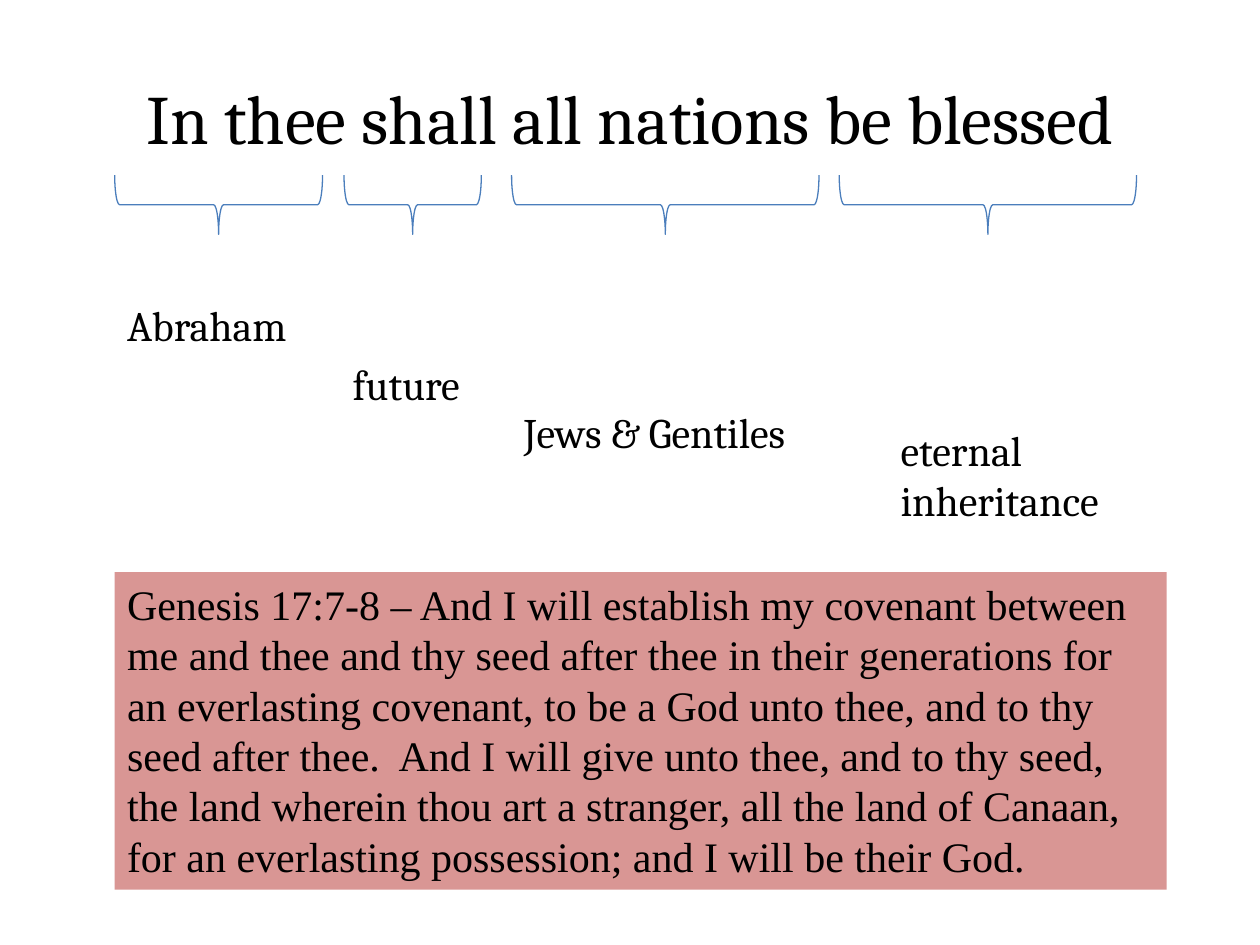
import pptx
import pptx.util
import pptx.dml.color
import pptx.enum.shapes
import pptx.enum.text

Inches = pptx.util.Inches

TITLE = "In thee shall all nations be blessed"
PHRASES = [
    {"brace": (0.91, 1.65), "meaning": "Abraham", "box": (0.91, 2.33, 1.81, 0.5)},
    {"brace": (2.73, 1.09), "meaning": "future", "box": (2.7, 2.8, 1.43, 0.5)},
    {"brace": (4.06, 2.44), "meaning": "Jews & Gentiles", "box": (4.06, 3.18, 2.59, 0.5)},
    {"brace": (6.66, 2.36), "meaning": "eternal inheritance", "box": (7.05, 3.32, 1.97, 0.91)},
]
BRACE_TOP, BRACE_HEIGHT = 1.39, 0.47
VERSE = (
    "Genesis 17:7-8 – And I will establish my covenant between me and thee and thy seed "
    "after thee in their generations for an everlasting covenant, to be a God unto thee, "
    "and to thy seed after thee.  And I will give unto thee, and to thy seed, the land "
    "wherein thou art a stranger, all the land of Canaan, for an everlasting possession; "
    "and I will be their God."
)


def color(hex_string):
    """Turn a hex string into a colour."""
    return pptx.dml.color.RGBColor.from_string(hex_string)


def write_text(shape, text, size=24, font="Cambria", align="LEFT", anchor="TOP"):
    """Write one formatted paragraph into a shape."""
    frame = shape.text_frame
    frame.word_wrap = True
    frame.vertical_anchor = getattr(pptx.enum.text.MSO_ANCHOR, anchor)
    paragraph = frame.paragraphs[0]
    paragraph.alignment = getattr(pptx.enum.text.PP_ALIGN, align)
    run = paragraph.add_run()
    run.text = text
    run.font.name = font
    run.font.size = pptx.util.Pt(size)
    run.font.color.rgb = color("000000")


def add_title(slide, left, top, width, height):
    """Place the promise in the title placeholder."""
    title = slide.shapes.title
    title.left, title.top = Inches(left), Inches(top)
    title.width, title.height = Inches(width), Inches(height)
    write_text(title, TITLE, size=39.6, align="CENTER", anchor="MIDDLE")


def add_brace(slide, left, top, width, height):
    """Draw a brace that opens upward and fills the given box."""
    brace = slide.shapes.add_shape(
        pptx.enum.shapes.MSO_SHAPE.RIGHT_BRACE,
        Inches(left + (width - height) / 2), Inches(top + (height - width) / 2),
        Inches(height), Inches(width))
    brace.rotation = 90
    brace.shadow.inherit = False
    brace.fill.background()
    brace.line.color.rgb = color("4B7EBC")
    brace.line.width = pptx.util.Pt(0.75)


def add_meaning(slide, text, left, top, width, height):
    """Add the meaning of one phrase as a text box."""
    box = slide.shapes.add_textbox(Inches(left), Inches(top), Inches(width), Inches(height))
    write_text(box, text)


def add_verse(slide, left, top, width, height):
    """Add the scripture panel."""
    panel = slide.shapes.add_shape(
        pptx.enum.shapes.MSO_SHAPE.RECTANGLE,
        Inches(left), Inches(top), Inches(width), Inches(height))
    panel.shadow.inherit = False
    panel.fill.solid()
    panel.fill.fore_color.rgb = color("D99694")
    panel.line.fill.background()
    write_text(panel, VERSE, font="Times New Roman")


def main():
    """Build and save the presentation."""
    presentation = pptx.Presentation()
    presentation.slide_width, presentation.slide_height = Inches(10), Inches(7.5)
    slide = presentation.slides.add_slide(presentation.slide_layouts[5])
    add_title(slide, 0.5, 0.3, 9, 1.25)
    for phrase in PHRASES:
        left, width = phrase["brace"]
        add_brace(slide, left, BRACE_TOP, width, BRACE_HEIGHT)
    for phrase in PHRASES:
        add_meaning(slide, phrase["meaning"], *phrase["box"])
    add_verse(slide, 0.91, 4.54, 8.35, 2.52)
    presentation.save("out.pptx")


if __name__ == "__main__":
    main()
